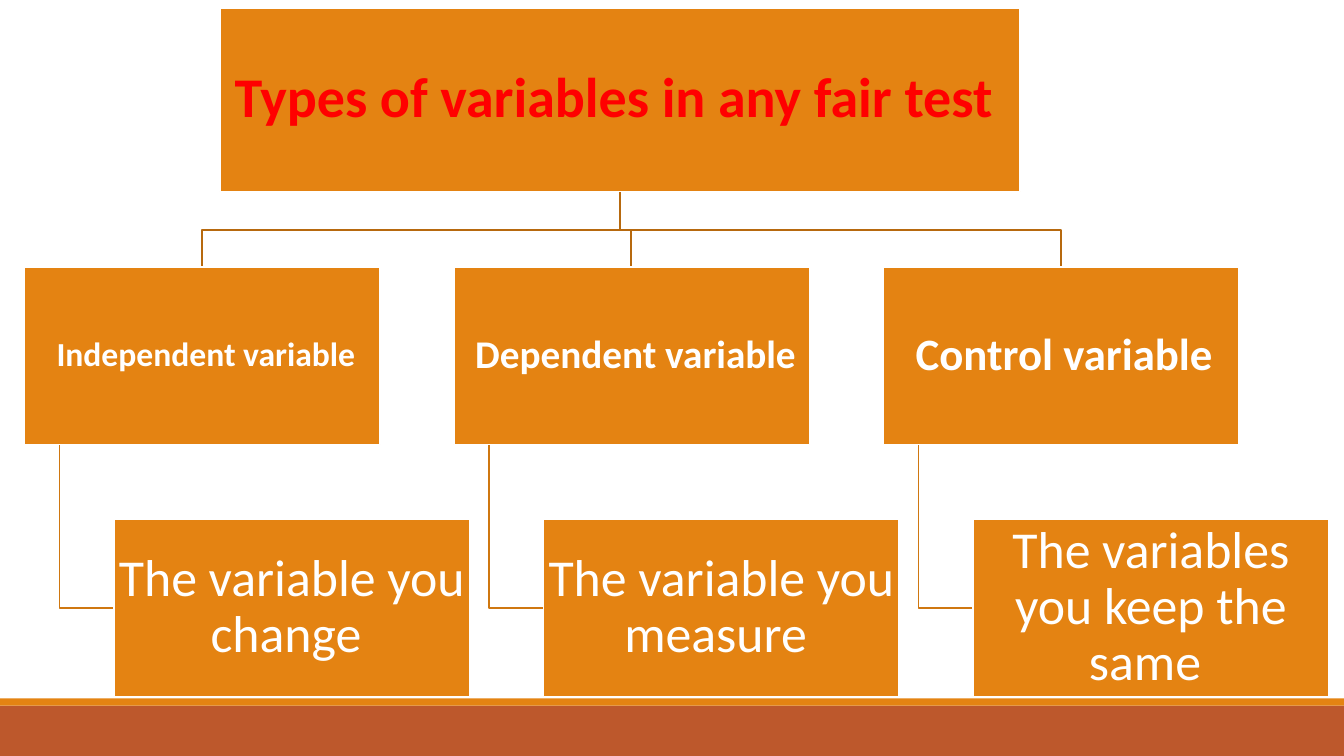
from pptx import Presentation
from pptx.dml.color import RGBColor
from pptx.enum.shapes import MSO_SHAPE as Shape
from pptx.enum.text import MSO_ANCHOR as Anchor, PP_ALIGN as Align
from pptx.util import Pt

EMU_PER_PX = 9144  # 100 px to the inch

ORANGE, RUST, WHITE, RED = "E48312", "BD582C", "FFFFFF", "FF0000"
UPPER_LINE, LOWER_LINE = "B7690E", "CF7710"

SLIDE_WIDTH, SLIDE_HEIGHT = 1333, 750
TITLE_LEFT, TITLE_TOP, TITLE_WIDTH, TITLE_HEIGHT = 218, 8, 794, 182
BOX_WIDTH, BOX_HEIGHT = 353, 176
COLUMN_LEFT, COLUMN_STEP = 24, 426
TYPE_TOP, MEANING_TOP = 265, 515
MEANING_INDENT, TRUNK_INDENT = 89, 35

# Runs of the variable type with their sizes, inset in px, meaning
VARIABLES = [
    ([(" Independent variable", 24)], 2, "The variable you change "),
    ([(" ", 24), ("Dependent variable", 28)], 2, "The variable you measure "),
    ([(" ", 20), ("Control variable", 32)], 1, "The variables you keep the same "),
]


def px(length):
    return length * EMU_PER_PX


def color(hex_value):
    return RGBColor.from_string(hex_value)


def add_rectangle(slide, left, top, width, height, fill, line=None):
    shape = slide.shapes.add_shape(
        Shape.RECTANGLE, px(left), px(top), px(width), px(height))
    shape.shadow.inherit = False
    shape.fill.solid()
    shape.fill.fore_color.rgb = color(fill)
    if line:
        shape.line.color.rgb = color(line)
        shape.line.width = Pt(1.25)
    else:
        shape.line.fill.background()
    return shape


def add_box(slide, left, top, width, height, runs, inset=3, bold=True, text_color=WHITE):
    shape = add_rectangle(slide, left, top, width, height, ORANGE, WHITE)
    frame = shape.text_frame
    frame.word_wrap = True
    frame.vertical_anchor = Anchor.MIDDLE
    frame.margin_left = frame.margin_right = px(inset)
    frame.margin_top = frame.margin_bottom = px(inset)
    paragraph = frame.paragraphs[0]
    paragraph.alignment = Align.CENTER
    paragraph.line_spacing = 0.9
    paragraph.font.name = "Calibri"
    paragraph.font.bold = bold
    paragraph.font.color.rgb = color(text_color)
    for text, size in runs:
        run = paragraph.add_run()
        run.text = text
        run.font.size = Pt(size)


def add_elbow(slide, points, line):
    start, *others = [(px(x), px(y)) for x, y in points]
    builder = slide.shapes.build_freeform(*start)
    builder.add_line_segments(others, close=False)
    shape = builder.convert_to_shape()
    shape.shadow.inherit = False
    shape.fill.background()
    shape.line.color.rgb = color(line)
    shape.line.width = Pt(1.25)


def add_branch(slide, left, type_runs, inset, meaning):
    # Line from the title down to the variable type
    title_center = TITLE_LEFT + TITLE_WIDTH // 2
    title_bottom = TITLE_TOP + TITLE_HEIGHT
    type_center = left + BOX_WIDTH // 2
    middle = (title_bottom + TYPE_TOP) // 2 + 1
    add_elbow(slide, [(title_center, title_bottom), (title_center, middle),
                      (type_center, middle), (type_center, TYPE_TOP)], UPPER_LINE)

    # Line from the variable type to its meaning
    trunk = left + TRUNK_INDENT
    meaning_left = left + MEANING_INDENT
    meaning_middle = MEANING_TOP + BOX_HEIGHT // 2
    add_elbow(slide, [(trunk, TYPE_TOP + BOX_HEIGHT), (trunk, meaning_middle),
                      (meaning_left, meaning_middle)], LOWER_LINE)

    # Boxes
    add_box(slide, left, TYPE_TOP, BOX_WIDTH, BOX_HEIGHT, type_runs, inset)
    add_box(slide, meaning_left, MEANING_TOP, BOX_WIDTH, BOX_HEIGHT,
            [(meaning, 37)], bold=False)


def main():
    presentation = Presentation()
    presentation.slide_width = px(SLIDE_WIDTH)
    presentation.slide_height = px(SLIDE_HEIGHT)
    slide = presentation.slides.add_slide(presentation.slide_layouts[6])

    # Footer bands
    add_rectangle(slide, 0, 700, SLIDE_WIDTH, 50, RUST)
    add_rectangle(slide, 0, 693, SLIDE_WIDTH, 7, ORANGE)

    # Branches, one for each variable
    for index, (type_runs, inset, meaning) in enumerate(VARIABLES):
        add_branch(slide, COLUMN_LEFT + index * COLUMN_STEP, type_runs, inset, meaning)

    # Title
    add_box(slide, TITLE_LEFT, TITLE_TOP, TITLE_WIDTH, TITLE_HEIGHT,
            [("Types of variables in any fair test ", 40)], text_color=RED)

    presentation.save("out.pptx")


if __name__ == "__main__":
    main()
